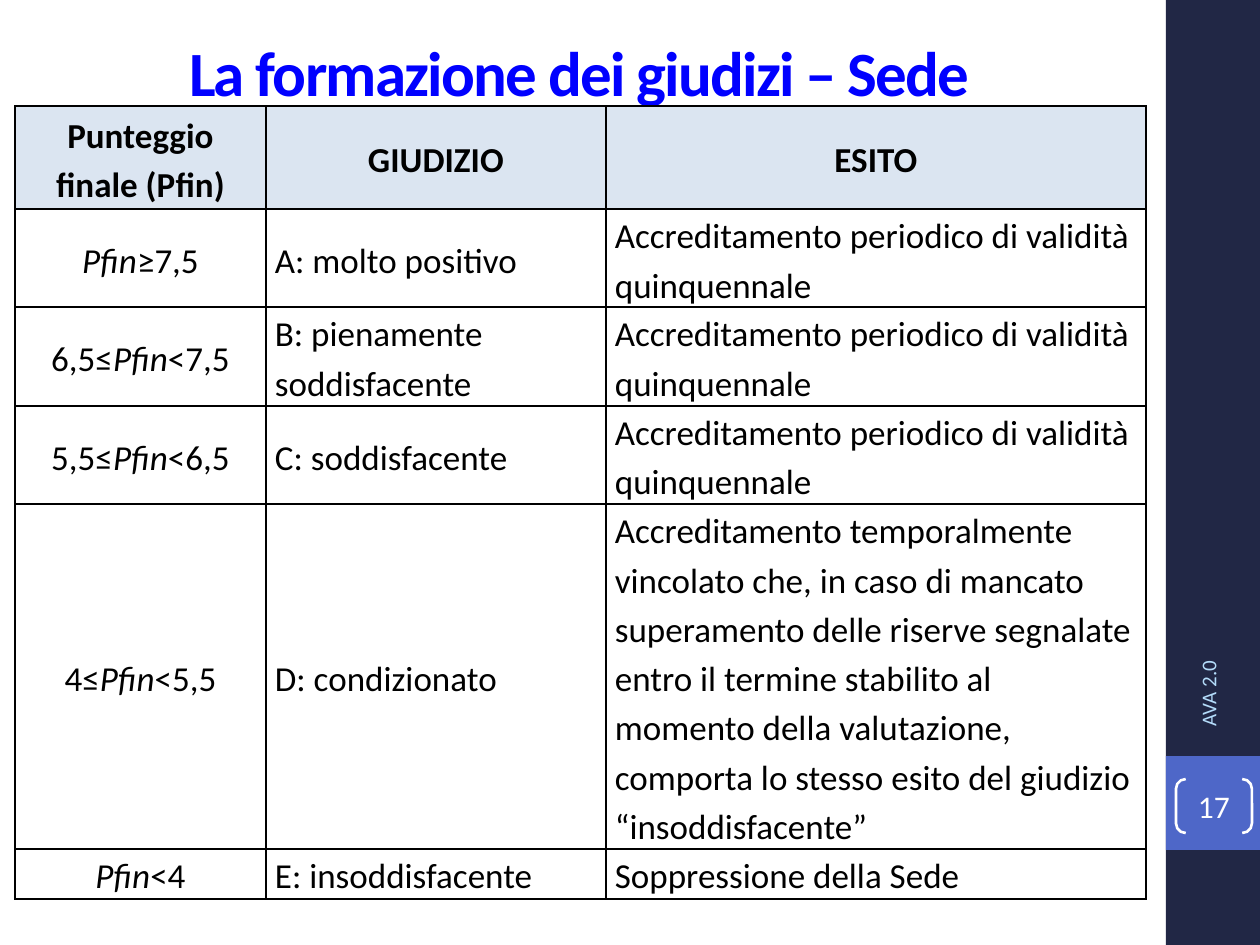
from lxml.etree import SubElement
from pptx import Presentation
from pptx.dml.color import RGBColor
from pptx.enum.shapes import MSO_SHAPE as SHAPE
from pptx.enum.text import MSO_ANCHOR as ANCHOR, PP_ALIGN as ALIGN
from pptx.oxml.ns import qn
from pptx.util import Emu, Pt

EMU_PER_PX = 914400 / 126
FONT = "Calibri"
BLACK = RGBColor(0x00, 0x00, 0x00)
WHITE = RGBColor(0xFF, 0xFF, 0xFF)
TITLE_BLUE = RGBColor(0x00, 0x00, 0xFF)
NAVY = RGBColor(0x21, 0x27, 0x45)
ACCENT = RGBColor(0x4E, 0x67, 0xC8)
PALE_BLUE = RGBColor(0xB4, 0xDC, 0xFA)
HEADER_FILL = RGBColor(0xDB, 0xE5, 0xF1)

COLUMNS = (251, 340, 540)
ROWS = (103, 98, 99, 98, 345, 50)
SCORE = "Pfin"
FIVE_YEARS = "Accreditamento periodico di validità quinquennale"
HEADER = ("Punteggio finale (Pfin)", "GIUDIZIO", "ESITO")
JUDGEMENTS = (
    ("Pfin≥7,5", "A: molto positivo", FIVE_YEARS),
    ("6,5≤Pfin<7,5", "B: pienamente soddisfacente", FIVE_YEARS),
    ("5,5≤Pfin<6,5", "C: soddisfacente", FIVE_YEARS),
    ("4≤Pfin<5,5", "D: condizionato",
     "Accreditamento temporalmente vincolato che, in caso di mancato "
     "superamento delle riserve segnalate entro il termine stabilito al "
     "momento della valutazione, comporta lo stesso esito del giudizio "
     "“insoddisfacente”"),
    ("Pfin<4", "E: insoddisfacente", "Soppressione della Sede"),
)


def px(n):
    """Turn pixels into EMU."""
    return Emu(round(n * EMU_PER_PX))


def add_run(p, text, size, color, bold=False, italic=False):
    """Append one formatted run to a paragraph."""
    r = p.add_run()
    r.text = text
    r.font.name = FONT
    r.font.size = Pt(size)
    r.font.bold = bold
    r.font.italic = italic
    r.font.color.rgb = color
    return r


def add_block(s, x, y, w, h, fill):
    """Add a plain filled rectangle."""
    sp = s.shapes.add_shape(SHAPE.RECTANGLE, px(x), px(y), px(w), px(h))
    sp.shadow.inherit = False
    sp.fill.solid()
    sp.fill.fore_color.rgb = fill
    sp.line.fill.background()


def add_label(s, x, y, w, h, text, size, color, align, bold=False):
    """Add a one-line text box and return it with its run."""
    sp = s.shapes.add_textbox(px(x), px(y), px(w), px(h))
    tf = sp.text_frame
    tf.word_wrap = True
    tf.vertical_anchor = ANCHOR.MIDDLE
    p = tf.paragraphs[0]
    p.alignment = align
    return sp, add_run(p, text, size, color, bold)


def add_page_number(s, x, y, w, h, text):
    """Add the page number between brackets."""
    sp = s.shapes.add_shape(SHAPE.DOUBLE_BRACKET, px(x), px(y), px(w), px(h))
    sp.adjustments[0] = 0.18
    sp.shadow.inherit = False
    sp.fill.background()
    sp.line.color.rgb = WHITE
    sp.line.width = Pt(1.5)
    tf = sp.text_frame
    tf.margin_left = tf.margin_right = tf.margin_top = tf.margin_bottom = 0
    tf.vertical_anchor = ANCHOR.MIDDLE
    p = tf.paragraphs[0]
    p.alignment = ALIGN.CENTER
    add_run(p, text, 18, WHITE)


def add_borders(cell):
    """Draw a thin black line on each side of a cell."""
    tcPr = cell._tc.get_or_add_tcPr()
    for side in ("a:lnL", "a:lnR", "a:lnT", "a:lnB"):
        ln = SubElement(tcPr, qn(side), w=str(Pt(1)))
        fill = SubElement(ln, qn("a:solidFill"))
        SubElement(fill, qn("a:srgbClr"), val=str(BLACK))


def fill_cell(cell, text, header, score):
    """Format one table cell and write its text."""
    add_borders(cell)
    if header:
        cell.fill.solid()
        cell.fill.fore_color.rgb = HEADER_FILL
    else:
        cell.fill.background()
    cell.margin_left = cell.margin_right = px(9)
    cell.margin_top = cell.margin_bottom = 0
    cell.vertical_anchor = ANCHOR.MIDDLE
    p = cell.text_frame.paragraphs[0]
    p.alignment = ALIGN.CENTER if header or score else ALIGN.LEFT
    p.line_spacing = 1.15
    p.space_before = Pt(5)
    parts = text.partition(SCORE) if score and not header else (text,)
    for part in filter(None, parts):
        add_run(p, part, 20, BLACK, header, part == SCORE)


def add_judgement_table(s, x, y):
    """Add the table of scores, judgements and outcomes."""
    table = s.shapes.add_table(len(ROWS), len(COLUMNS), px(x), px(y),
                               px(sum(COLUMNS)), px(sum(ROWS))).table
    table.horz_banding = False
    for column, width in zip(table.columns, COLUMNS):
        column.width = px(width)
    for row, height in zip(table.rows, ROWS):
        row.height = px(height)
    for i, texts in enumerate((HEADER, *JUDGEMENTS)):
        for j, text in enumerate(texts):
            fill_cell(table.cell(i, j), text, i == 0, j == 0)


def main():
    """Build the slide and save it."""
    prs = Presentation()
    prs.slide_width, prs.slide_height = px(1260), px(945)
    s = prs.slides.add_slide(prs.slide_layouts[6])
    add_block(s, 1166, 0, 94, 945, NAVY)
    add_block(s, 1166, 756, 94, 94, ACCENT)
    _, r = add_label(s, 44, 37, 1071, 69, "La formazione dei giudizi – Sede",
                     36, TITLE_BLUE, ALIGN.CENTER, True)
    r.font._element.set("spc", "-100")
    add_page_number(s, 1176, 779, 76, 54, "17")
    sp, _ = add_label(s, 990, 496, 436, 50, "AVA 2.0", 12, PALE_BLUE, ALIGN.LEFT)
    sp.rotation = 270
    add_judgement_table(s, 15, 106)
    prs.save("out.pptx")


if __name__ == "__main__":
    main()
